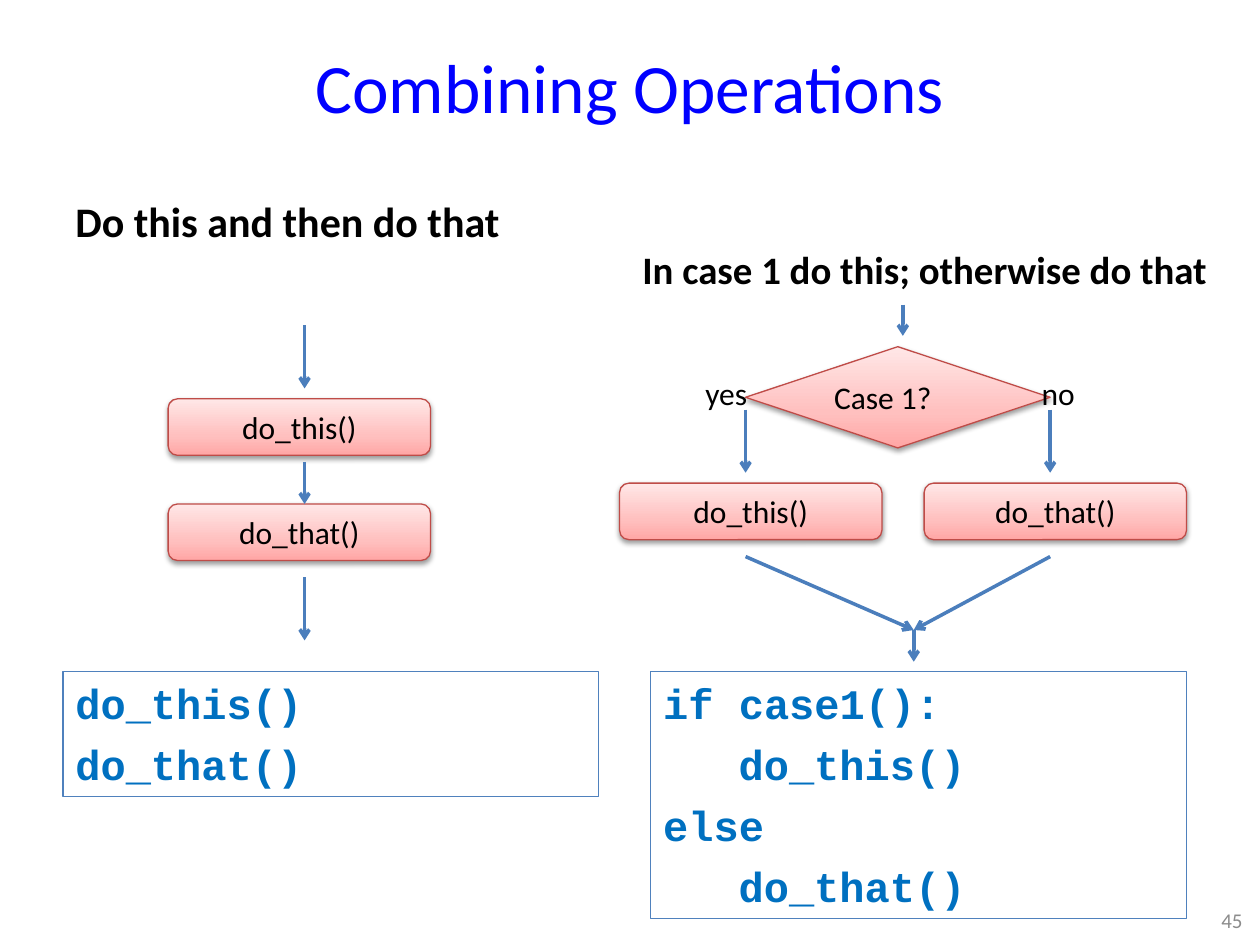
import dataclasses

import lxml.etree
import pptx
import pptx.dml.color
import pptx.enum.shapes
import pptx.enum.text
import pptx.oxml.ns
import pptx.util

Cm = pptx.util.Cm
Pt = pptx.util.Pt
qn = pptx.oxml.ns.qn
Align = pptx.enum.text.PP_ALIGN
Anchor = pptx.enum.text.MSO_ANCHOR
Shape = pptx.enum.shapes.MSO_SHAPE


@dataclasses.dataclass(frozen=True)
class Theme:
    title: str = "0000FF"
    ink: str = "000000"
    muted: str = "8C8C8C"
    code: str = "0070C0"
    code_border: str = "4F81BD"
    arrow: str = "4B7EBC"
    node_border: str = "BF4C48"
    node_stops: tuple = ((0, "FFA6A5"), (35, "FFC0BF"), (100, "FFE7E7"))
    body_font: str = "Calibri"
    code_font: str = "Courier New"
    title_size: float = 39.6
    heading_size: float = 24
    long_heading_size: float = 22.2
    code_size: float = 24
    label_size: float = 18
    number_size: float = 12


def rgb(value):
    return pptx.dml.color.RGBColor.from_string(value)


def add_child(parent, tag, **attributes):
    values = {name: str(value) for name, value in attributes.items()}
    return lxml.etree.SubElement(parent, qn(tag), values)


def write_text(box, text, *, size, color, font, bold=False, align=Align.LEFT,
               anchor=Anchor.TOP, before=0, indents=()):
    frame = box.text_frame
    frame.word_wrap = True
    frame.vertical_anchor = anchor
    for index, line in enumerate(text.split("\n")):
        para = frame.add_paragraph() if index else frame.paragraphs[0]
        para.alignment = align
        para.space_before = Pt(before)
        if indents:
            para._p.get_or_add_pPr().set("marL", str(Cm(indents[index])))
        span = para.add_run()
        span.text = line
        span.font.size = Pt(size)
        span.font.name = font
        span.font.bold = bold
        span.font.color.rgb = rgb(color)


class FlowPage:
    def __init__(self, page, theme):
        self.page = page
        self.theme = theme

    def label(self, text, left, top, width, height, *, size=None, color=None, **style):
        box = self.page.shapes.add_textbox(Cm(left), Cm(top), Cm(width), Cm(height))
        write_text(box, text, size=size or self.theme.label_size,
                   color=color or self.theme.ink, font=self.theme.body_font, **style)

    def outline(self, kind, left, top, width, height, color):
        box = self.page.shapes.add_shape(kind, Cm(left), Cm(top), Cm(width), Cm(height))
        box.shadow.inherit = False
        box.fill.background()
        box.line.color.rgb = rgb(color)
        box.line.width = Pt(0.75)
        return box

    def node(self, text, left, top, width=5.29, height=1.14,
             kind=Shape.ROUNDED_RECTANGLE, align=Align.CENTER):
        theme = self.theme
        box = self.outline(kind, left, top, width, height, theme.node_border)
        box.fill.gradient()
        box.fill.gradient_angle = 90
        properties = box._element.spPr
        stops = properties.find(qn("a:gradFill")).find(qn("a:gsLst"))
        for stop in list(stops):
            stops.remove(stop)
        for position, color in theme.node_stops:
            stop = add_child(stops, "a:gs", pos=position * 1000)
            add_child(stop, "a:srgbClr", val=color)
        shadow = add_child(properties.find(qn("a:effectLst")), "a:outerShdw",
                           blurRad=Pt(3.1), dist=Pt(1.6), dir=5400000, rotWithShape=0)
        shade = add_child(shadow, "a:srgbClr", val=theme.ink)
        add_child(shade, "a:alpha", val=38000)
        write_text(box, text, size=theme.label_size, color=theme.ink,
                   font=theme.body_font, align=align, anchor=Anchor.MIDDLE)

    def arrow(self, start_x, start_y, end_x, end_y):
        line = self.page.shapes.add_connector(
            pptx.enum.shapes.MSO_CONNECTOR.STRAIGHT,
            Cm(start_x), Cm(start_y), Cm(end_x), Cm(end_y))
        line.line.color.rgb = rgb(self.theme.arrow)
        line.line.width = Pt(2)
        add_child(line.line._get_or_add_ln(), "a:tailEnd", type="arrow")
        add_child(line._element.spPr, "a:effectLst")

    def code(self, text, left, height, indents):
        theme = self.theme
        box = self.outline(Shape.RECTANGLE, left, 13.54, 10.8, height, theme.code_border)
        write_text(box, text, size=theme.code_size, color=theme.code,
                   font=theme.code_font, bold=True, before=6, indents=indents)


def main():
    deck = pptx.Presentation()
    deck.slide_width, deck.slide_height = Cm(25.4), Cm(19.05)
    theme = Theme()
    flow = FlowPage(deck.slides.add_slide(deck.slide_layouts[6]), theme)

    flow.label("Combining Operations", 1.27, 0.76, 22.86, 1.96, size=theme.title_size,
               color=theme.title, align=Align.CENTER, anchor=Anchor.MIDDLE)
    flow.label("Do this and then do that", 1.27, 3.3, 11.23, 1.78,
               size=theme.heading_size, bold=True, anchor=Anchor.BOTTOM)
    flow.label("In case 1 do this; otherwise do that", 12.7, 4.24, 12.07, 1.78,
               size=theme.long_heading_size, bold=True, anchor=Anchor.BOTTOM)
    flow.label("45", 24.1, 18.03, 1.2, 1.02, size=theme.number_size,
               color=theme.muted, align=Align.RIGHT, anchor=Anchor.MIDDLE)

    sequence_x = 6.14
    flow.node("do_this()", 3.39, 8.04)
    flow.node("do_that()", 3.39, 10.16)
    for top, bottom in ((6.56, 7.83), (9.31, 10.16), (11.64, 12.91)):
        flow.arrow(sequence_x, top, sequence_x, bottom)

    yes_x, no_x, merge_x, merge_y = 15.03, 21.17, 18.42, 12.7
    flow.arrow(18.2, 6.14, 18.2, 6.77)
    flow.node("Case 1?", yes_x, 6.99, 6.14, 2.04,
              kind=Shape.FLOWCHART_DECISION, align=Align.LEFT)
    for branch_x, answer, action in ((yes_x, "yes", "do_this()"), (no_x, "no", "do_that()")):
        flow.arrow(branch_x, 8.26, branch_x, 9.53)
        flow.node(action, branch_x - 2.54, 9.74)
        flow.arrow(branch_x, 11.22, merge_x, merge_y)
    flow.label("yes", 13.97, 7.41, 1.48, 1.02)
    flow.label("no", 20.75, 7.41, 1.48, 1.02)
    flow.arrow(merge_x, merge_y, merge_x, 13.34)

    flow.code("do_this()\ndo_that()", 1.27, 2.52, (0, 0))
    flow.code("if case1():\ndo_this()\nelse\ndo_that()", 13.12, 4.98, (0, 1.52, 0, 1.52))

    deck.save("out.pptx")


if __name__ == "__main__":
    main()
